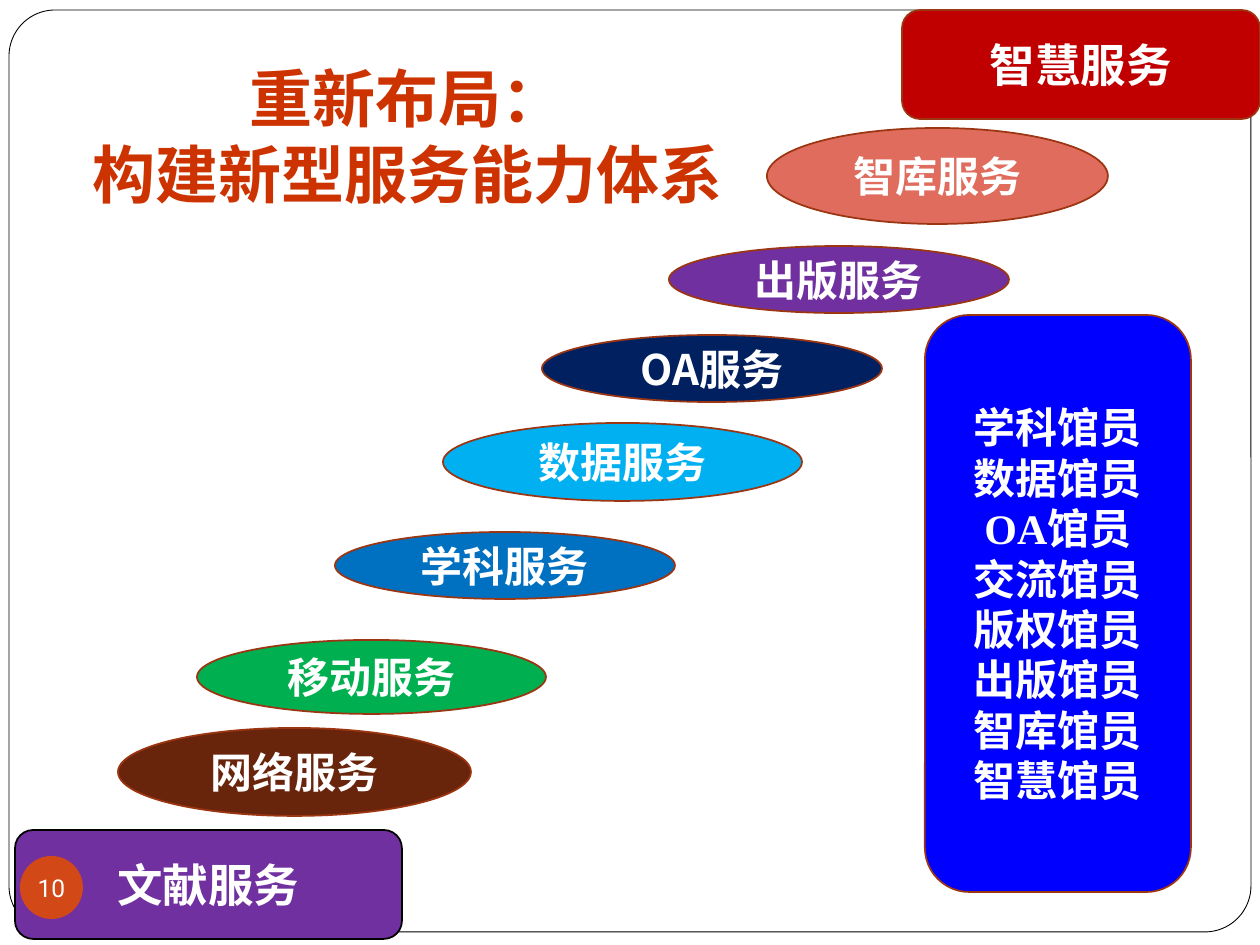
from lxml import etree
from pptx import Presentation
from pptx.dml.color import RGBColor
from pptx.enum.shapes import MSO_SHAPE
from pptx.enum.text import MSO_ANCHOR, PP_ALIGN
from pptx.oxml.ns import qn
from pptx.util import Pt

PX = 914400 // 126  # one px in EMU
ROUNDED = MSO_SHAPE.ROUNDED_RECTANGLE
OVAL = MSO_SHAPE.OVAL
MIDDLE, BOTTOM = MSO_ANCHOR.MIDDLE, MSO_ANCHOR.BOTTOM
CENTER = PP_ALIGN.CENTER

WHITE = RGBColor(0xFF, 0xFF, 0xFF)
BLACK = RGBColor(0x00, 0x00, 0x00)
TITLE_RED = RGBColor(0xCC, 0x33, 0x00)
RUST = RGBColor(0x9C, 0x35, 0x11)
ORANGE = RGBColor(0xD3, 0x48, 0x17)
PURPLE = RGBColor(0x70, 0x30, 0xA0)
CRIMSON = RGBColor(0xC0, 0x00, 0x00)
BROWN = RGBColor(0x69, 0x24, 0x0C)
GREEN = RGBColor(0x00, 0xB0, 0x50)
BLUE = RGBColor(0x00, 0x70, 0xC0)
SKY = RGBColor(0x00, 0xB0, 0xF0)
NAVY = RGBColor(0x00, 0x20, 0x60)
SALMON = RGBColor(0xDF, 0x6C, 0x5D)
PANEL_BLUE = RGBColor(0x00, 0x00, 0xFF)

SANS, SERIF, HAN = "Roboto", "Times New Roman", "Noto Sans CJK SC"

# Services from the lowest step to the highest: label, fill, box
STEPS = [
    ("网络服务", BROWN, (118, 728, 353, 88)),
    ("移动服务", GREEN, (197, 640, 349, 74)),
    ("学科服务", BLUE, (335, 532, 340, 67)),
    ("数据服务", SKY, (443, 423, 359, 78)),
    ("OA服务", NAVY, (542, 335, 340, 67)),
    ("出版服务", PURPLE, (669, 246, 340, 67)),
    ("智库服务", SALMON, (767, 128, 341, 96)),
]
LIBRARIANS = ["学科馆员", "数据馆员", "OA馆员", "交流馆员",
              "版权馆员", "出版馆员", "智库馆员", "智慧馆员"]


def emu(box):
    return [length * PX for length in box]


def write(frame, lines, size, font_name, color=WHITE, bold=True, anchor=MIDDLE):
    """Fill a text frame with centred paragraphs, one for each line."""
    frame.vertical_anchor = anchor
    frame.text = "\n".join(lines)
    for paragraph in frame.paragraphs:
        paragraph.alignment = CENTER
        font = paragraph.font
        font.size, font.bold, font.name = Pt(size), bold, font_name
        font.color.rgb = color
        defaults = paragraph._p.pPr.find(qn("a:defRPr"))
        etree.SubElement(defaults, qn("a:ea")).set("typeface", HAN)


def add_block(slide, kind, box, fill, line=RUST, width=1):
    block = slide.shapes.add_shape(kind, *emu(box))
    block.shadow.inherit = False
    block.fill.solid()
    block.fill.fore_color.rgb = fill
    if line is None:
        block.line.fill.background()
    else:
        block.line.color.rgb = line
        block.line.width = Pt(width)
    return block


def add_frame(slide, box):
    border = add_block(slide, ROUNDED, box, WHITE, BLACK, 0.5)
    border.adjustments[0] = 0.05


def add_title(slide, box):
    frame = slide.shapes.add_textbox(*emu(box)).text_frame
    frame.word_wrap = True
    frame.margin_bottom = 13 * PX
    write(frame, ["重新布局：\v构建新型服务能力体系"], 36, SANS, TITLE_RED, anchor=BOTTOM)


def add_end_point(slide, label, fill, line, box):
    """Add the rounded block at either end of the staircase."""
    block = add_block(slide, ROUNDED, box, fill, line)
    write(block.text_frame, [label], 26, SERIF)


def add_staircase(slide, steps):
    for label, fill, box in steps:
        step = add_block(slide, OVAL, box, fill)
        write(step.text_frame, [label], 24, HAN)


def add_librarian_panel(slide, box):
    panel = add_block(slide, ROUNDED, box, PANEL_BLUE)
    write(panel.text_frame, LIBRARIANS, 24, SERIF)


def add_page_number(slide, number, box):
    badge = add_block(slide, OVAL, box, ORANGE, None)
    frame = badge.text_frame
    frame.margin_left = frame.margin_right = 0
    frame.margin_top = frame.margin_bottom = 0
    frame.word_wrap = False
    write(frame, [number], 14, SANS, bold=False)


def main():
    deck = Presentation()
    deck.slide_width, deck.slide_height = emu((1260, 945))
    slide = deck.slides.add_slide(deck.slide_layouts[6])
    add_frame(slide, (9, 10, 1242, 922))
    add_title(slide, (-25, 116, 864, 108))
    add_end_point(slide, "文献服务", PURPLE, BLACK, (15, 830, 387, 109))
    add_end_point(slide, "智慧服务", CRIMSON, RUST, (902, 10, 358, 109))
    add_staircase(slide, STEPS)
    add_librarian_panel(slide, (925, 315, 266, 577))
    add_page_number(slide, "10", (20, 856, 63, 63))
    deck.save("out.pptx")


if __name__ == "__main__":
    main()
